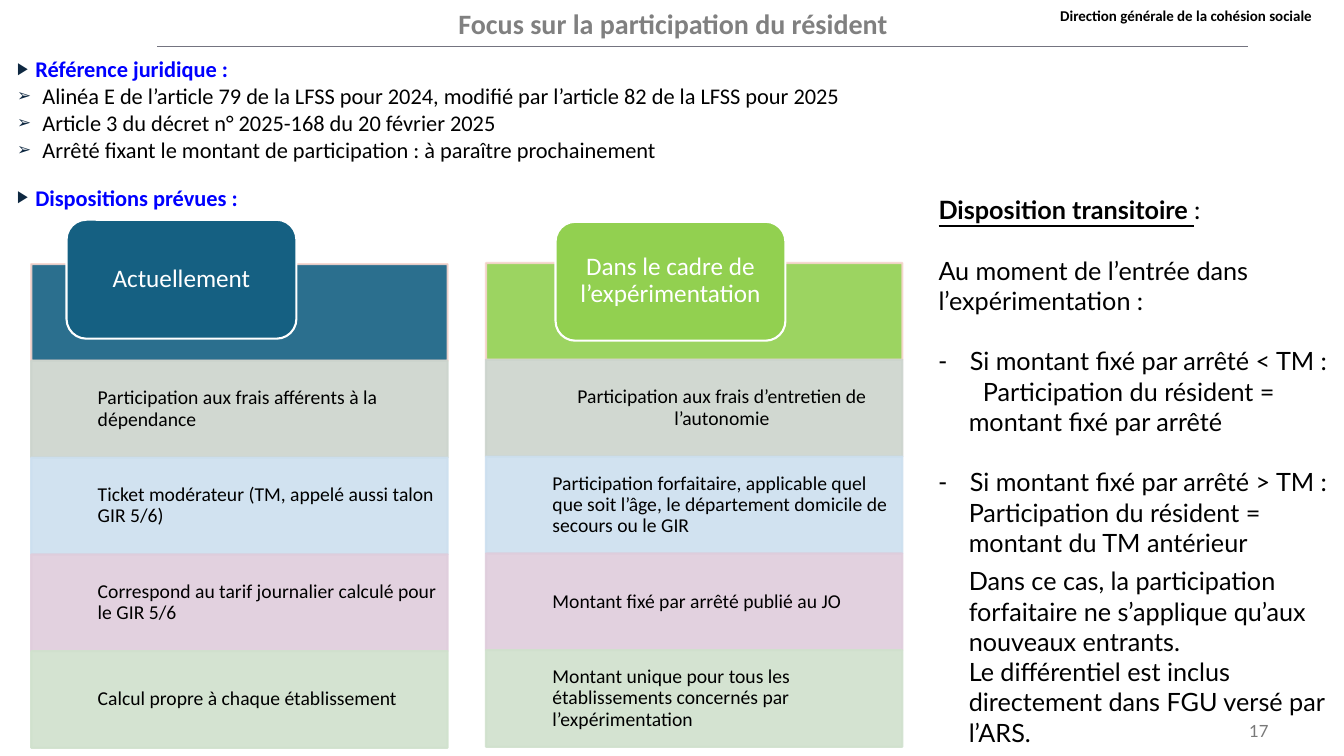
from lxml.etree import SubElement
from pptx import Presentation
from pptx.dml.color import RGBColor
from pptx.enum.shapes import MSO_CONNECTOR, MSO_SHAPE
from pptx.enum.text import MSO_ANCHOR as ANCHOR, MSO_AUTO_SIZE, PP_ALIGN as ALIGN
from pptx.oxml.ns import qn
from pptx.util import Pt

PX = 9144


def paint(color_format, value, alpha=100):
    color_format.rgb = RGBColor.from_string(value)
    if alpha < 100:
        for node in color_format._xFill.iter(qn("a:srgbClr")):
            SubElement(node, qn("a:alpha"), val=str(alpha * 1000))


def style(para, size, color, bold=False, font="Calibri", align=ALIGN.LEFT,
          left=0, indent=0, before=0, bullet=None, bullet_color=None, bullet_size=100):
    para.alignment = align
    para.space_before = Pt(before)
    for span in para.runs:
        span.font.name, span.font.size, span.font.bold = font, Pt(size), bold
        paint(span.font.color, color)
    props = para._p.get_or_add_pPr()
    props.set("marL", str(left * PX))
    props.set("indent", str(indent * PX))
    if bullet:
        if bullet_color:
            SubElement(SubElement(props, qn("a:buClr")), qn("a:srgbClr"), val=bullet_color)
        SubElement(props, qn("a:buSzPct"), val=str(bullet_size * 1000))
        SubElement(props, qn("a:buFont"), typeface="Arial")
        SubElement(props, qn("a:buChar"), char=bullet)


deck = Presentation()
deck.slide_width, deck.slide_height = 1333 * PX, 750 * PX
page = deck.slides.add_slide(deck.slide_layouts[1])

title = page.shapes.title
title.left, title.top, title.width, title.height = 67 * PX, 2 * PX, 1201 * PX, 43 * PX
title.text_frame.text = "Focus sur la participation du résident"
title.text_frame.vertical_anchor = ANCHOR.MIDDLE
title.text_frame.auto_size = MSO_AUTO_SIZE.NONE
style(title.text_frame.paragraphs[0], 20, "808080", True, align=ALIGN.CENTER)

rule = page.shapes.add_connector(MSO_CONNECTOR.STRAIGHT, 156 * PX, 46 * PX, 1238 * PX, 46 * PX)
paint(rule.line.color, "747480")
rule.line.width = Pt(0.75)
SubElement(rule._element.spPr, qn("a:effectLst"))

references = page.placeholders[1]
references.left, references.top, references.width, references.height = 7 * PX, 55 * PX, 1169 * PX, 160 * PX
frame = references.text_frame
frame.margin_top = frame.margin_bottom = 0
frame.auto_size = MSO_AUTO_SIZE.NONE
frame.text = "\n".join([
    "Référence juridique :",
    "Alinéa E de l’article 79 de la LFSS pour 2024, modifié par l’article 82 de la LFSS pour 2025",
    "Article 3 du décret n° 2025-168 du 20 février 2025",
    "Arrêté fixant le montant de participation : à paraître prochainement",
    "Dispositions prévues :",
])
last = len(frame.paragraphs) - 1
for index, para in enumerate(frame.paragraphs):
    heading = index in (0, last)
    hang = 18 if heading else 25
    style(para, 16, "0000FF" if heading else "000000", heading, align=ALIGN.JUSTIFY,
          left=hang, indent=-hang, before=13 if index == last else 0,
          bullet="▶" if heading else "➢", bullet_color="0E2841", bullet_size=75)
frame.paragraphs[last].line_spacing = 1.1

labels = [
    ((991, 1, 371, 28), "Direction générale de la cohésion sociale", 10.7, "000000", True, "Calibri", ALIGN.CENTER),
    ((968, 705, 300, 40), "17", 12, "797979", False, "Lato", ALIGN.RIGHT),
]
for bounds, words, size, color, bold, font, align in labels:
    label = page.shapes.add_textbox(*[value * PX for value in bounds])
    label.text_frame.word_wrap = True
    label.text_frame.text = words
    label.text_frame.vertical_anchor = ANCHOR.MIDDLE
    style(label.text_frame.paragraphs[0], size, color, bold, font, align)

ROW = 96
ROW_COLORS = ["CCD4CD", "CCDFEF", "DFCDDC", "D0E1CD"]
columns = [
    (31, 262, "156082", MSO_SHAPE.ROUNDED_RECTANGLE, (66, 218), "Actuellement", ALIGN.LEFT, [
        "Participation aux frais afférents à la dépendance",
        "Ticket modérateur (TM, appelé aussi talon GIR 5/6)",
        "Correspond au tarif journalier calculé pour le GIR 5/6",
        "Calcul propre à chaque établissement",
    ]),
    (482, 261, "92D050", MSO_SHAPE.FLOWCHART_ALTERNATE_PROCESS, (551, 220),
     "Dans le cadre de l’expérimentation", ALIGN.CENTER, [
        "Participation aux frais d’entretien de l’autonomie",
        "Participation forfaitaire, applicable quel que soit l’âge, le département domicile de secours ou le GIR",
        "Montant fixé par arrêté publié au JO",
        "Montant unique pour tous les établissements concernés par l’expérimentation",
    ]),
]
for left, top, accent, tab_kind, tab_at, heading, first_align, rows in columns:
    boxes = [(MSO_SHAPE.RECTANGLE, (left, top, 413, ROW), accent, "F7D5CE", 90, "", 14, "000000",
              ALIGN.LEFT, (66, 11))]
    for index, (words, color) in enumerate(zip(rows, ROW_COLORS)):
        boxes.append((MSO_SHAPE.RECTANGLE, (left, top + ROW * (index + 1), 413, ROW), color, color, 90,
                      words, 14, "000000", ALIGN.LEFT if index else first_align, (66, 11)))
    boxes.append((tab_kind, (*tab_at, 228, 118), accent, "FFFFFF", 100, heading, 18, "FFFFFF",
                  ALIGN.CENTER, (5, 5)))
    for kind, bounds, fill, edge, alpha, words, size, color, align, insets in boxes:
        box = page.shapes.add_shape(kind, *[value * PX for value in bounds])
        box.shadow.inherit = False
        box.fill.solid()
        paint(box.fill.fore_color, fill)
        paint(box.line.color, edge)
        box.line.width = Pt(1.5)
        if alpha < 100:
            for node in box._element.spPr.iter(qn("a:srgbClr")):
                SubElement(node, qn("a:alpha"), val=str(alpha * 1000))
        if words:
            frame = box.text_frame
            frame.word_wrap = True
            frame.vertical_anchor = ANCHOR.MIDDLE
            frame.margin_left = insets[0] * PX
            frame.margin_right = frame.margin_top = frame.margin_bottom = insets[1] * PX
            frame.text = words
            style(frame.paragraphs[0], size, color, align=align)
            frame.paragraphs[0].line_spacing = 0.9

transition = page.shapes.add_textbox(921 * PX, 188 * PX, 418 * PX, 564 * PX)
frame = transition.text_frame
frame.word_wrap = True
provisions = [
    ("Disposition transitoire ", 0, 0, 0, None),
    ("Au moment de l’entrée dans l’expérimentation :", 0, 0, 21.6, None),
    ("Si montant fixé par arrêté < TM :", 31, -31, 21.6, "-"),
    ("Participation du résident = montant fixé par arrêté", 30, 14, 0, None),
    ("Si montant fixé par arrêté > TM :", 31, -31, 21.6, "-"),
    ("Participation du résident = montant du TM antérieur", 30, 0, 0, None),
    ("Dans ce cas, la participation forfaitaire ne s’applique qu’aux nouveaux entrants.", 30, 0, 6, None),
    ("Le différentiel est inclus directement dans FGU versé par l’ARS.", 30, 0, 0, None),
]
frame.text = "\n".join(words for words, *layout in provisions)
frame.paragraphs[0].add_run().text = ":"
for para, (words, left, indent, before, bullet) in zip(frame.paragraphs, provisions):
    style(para, 18, "000000", font="Lato", left=left, indent=indent, before=before, bullet=bullet)
lead = frame.paragraphs[0].runs[0].font
lead.bold = lead.underline = True

deck.save("out.pptx")
